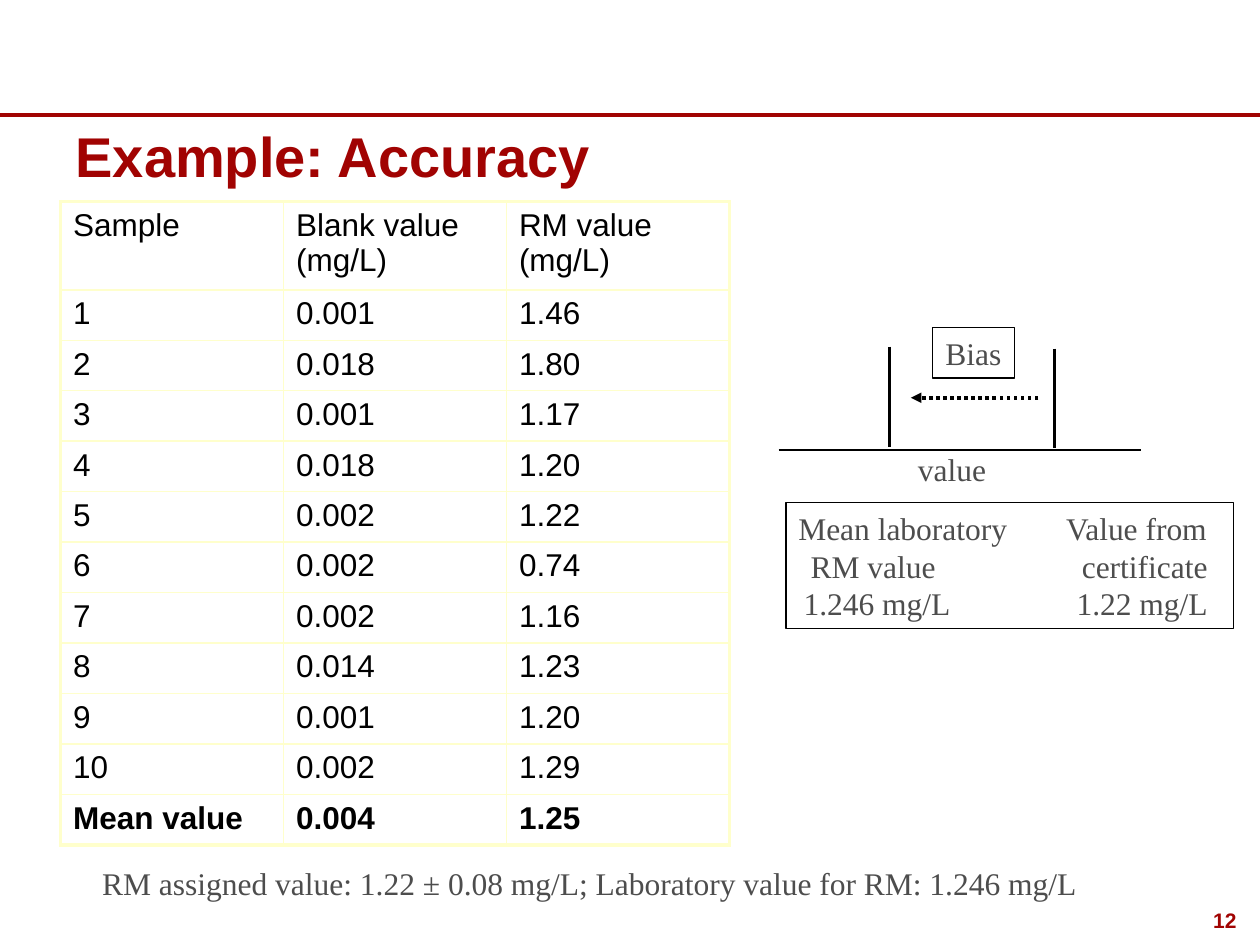
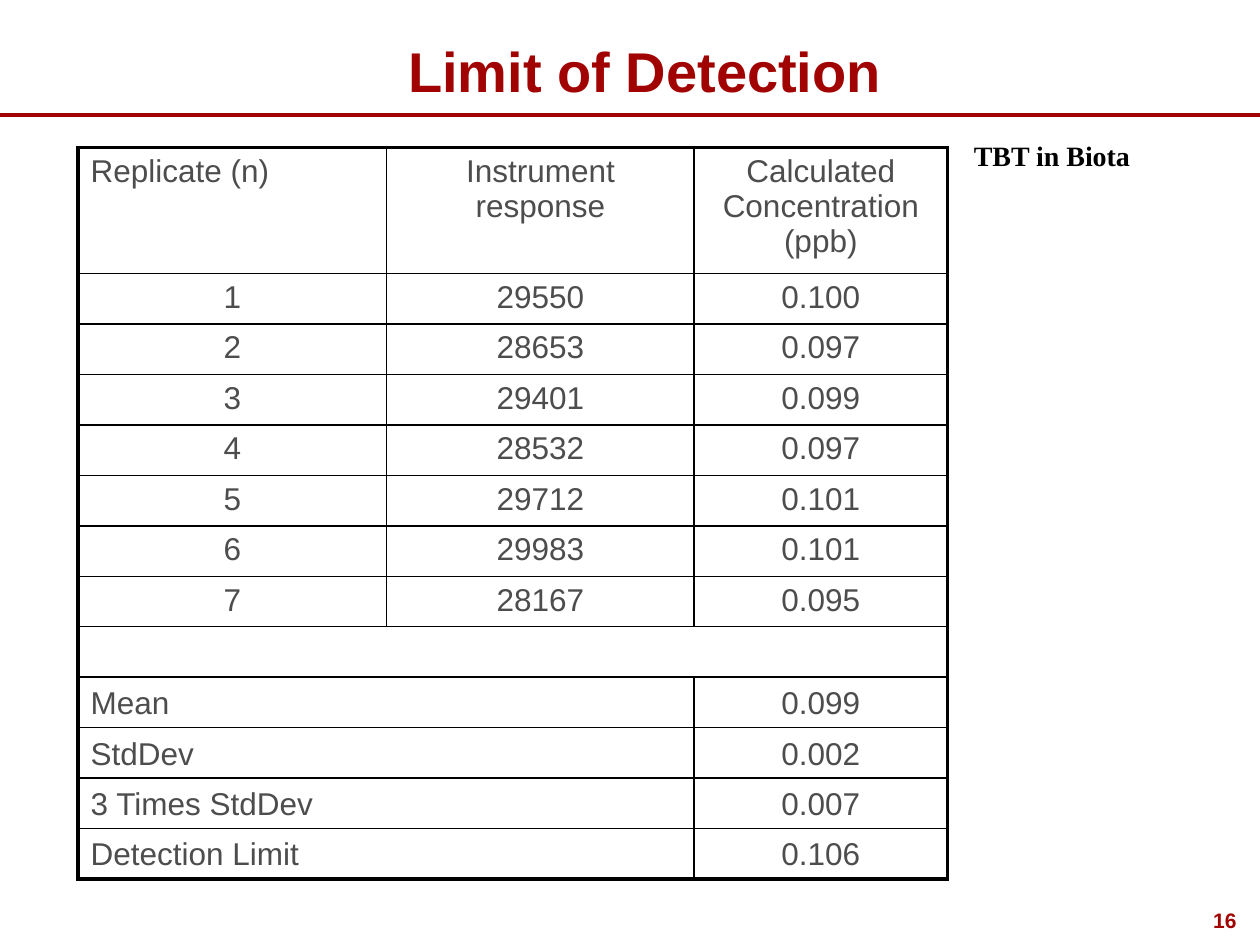
"""Build two slides on analytical quality: accuracy against a reference material and limit of detection."""
from lxml import etree
from pptx import Presentation
from pptx.dml.color import RGBColor
from pptx.enum import dml, shapes, text
from pptx.oxml.ns import qn
from pptx.util import Pt

COLORS = {"red": "A10302", "grey": "4D4D4D", "black": "000000", "cream": "FFFFCC"}
SANS, SERIF = "Arial", "Times New Roman"
LEFT, CENTER, RIGHT = text.PP_ALIGN.LEFT, text.PP_ALIGN.CENTER, text.PP_ALIGN.RIGHT
TOP, MIDDLE, BOTTOM = text.MSO_ANCHOR.TOP, text.MSO_ANCHOR.MIDDLE, text.MSO_ANCHOR.BOTTOM


def write(frame, words, font, size, color, bold=False, align=LEFT, anchor=TOP):
    frame.text = words
    frame.vertical_anchor = anchor
    for paragraph in frame.paragraphs:
        paragraph.alignment = align
        paragraph.font.size = Pt(size)
        for run in paragraph.runs:
            run.font.name, run.font.size, run.font.bold = font, Pt(size), bold
            run.font.color.rgb = RGBColor.from_string(COLORS[color])


def add_grid(slide, left, top, widths, heights, merges, color, outer):
    grid = slide.shapes.add_table(len(heights), len(widths), Pt(left), Pt(top),
                                  Pt(sum(widths)), Pt(sum(heights))).table
    grid.first_row = grid.horz_banding = False
    for column, width in zip(grid.columns, widths):
        column.width = Pt(width)
    for row, height in zip(grid.rows, heights):
        row.height = Pt(height)
    for r, last_c in merges:
        grid.cell(r, 0).merge(grid.cell(r, last_c))
    for r in range(len(heights)):
        for c in range(len(widths)):
            cell = grid.cell(r, c)
            end = c + (cell.span_width if cell.is_merge_origin else 1)
            on_edge = {"lnL": c == 0, "lnR": end == len(widths),
                       "lnT": r == 0, "lnB": r == len(heights) - 1}
            properties = cell._tc.get_or_add_tcPr()
            for side, is_outer in on_edge.items():
                border = etree.SubElement(properties, qn(f"a:{side}"),
                                          w=str(Pt(outer if is_outer else 1)))
                fill = etree.SubElement(border, qn("a:solidFill"))
                etree.SubElement(fill, qn("a:srgbClr"), val=COLORS[color])
            cell.fill.background()
    return grid


prs = Presentation()
prs.slide_width, prs.slide_height = Pt(720), Pt(540)
accuracy, detection = [prs.slides.add_slide(prs.slide_layouts[5]) for _ in range(2)]

for slide, heading, number, align, box in [
    (accuracy, "Example: Accuracy", "12", LEFT, (36, 21.6, 648, 90)),
    (detection, "Limit of Detection", "16", CENTER, (44.6, 16.6, 648, 46)),
]:
    title = slide.shapes.title
    title.left, title.top, title.width, title.height = map(Pt, box)
    write(title.text_frame, heading, SANS, 32, "red", True, align, BOTTOM)
    title.text_frame.auto_size = text.MSO_AUTO_SIZE.NONE
    page = slide.shapes.add_textbox(Pt(563.8), Pt(508.3), Pt(149.8), Pt(28))
    page.text_frame.word_wrap = True
    write(page.text_frame, number, SANS, 12, "red", True, RIGHT, BOTTOM)

blanks = ["0.001", "0.018", "0.001", "0.018", "0.002", "0.002", "0.002", "0.014", "0.001", "0.002"]
references = ["1.46", "1.80", "1.17", "1.20", "1.22", "0.74", "1.16", "1.23", "1.20", "1.29"]
samples = [("Sample", "Blank value (mg/L)", "RM value (mg/L)")]
samples += [(str(n), *pair) for n, pair in enumerate(zip(blanks, references), 1)]
samples.append(("Mean value", "0.004", "1.25"))
sample_grid = add_grid(accuracy, 34.6, 115.2, [127.4] * 3, [47.4] + [27.4] * 11, [], "cream", 2.25)
for r, sample in enumerate(samples):
    for c, value in enumerate(sample):
        write(sample_grid.cell(r, c).text_frame, value, SANS, 18, "black", r == len(samples) - 1)

responses = ["29550", "28653", "29401", "28532", "29712", "29983", "28167"]
concentrations = ["0.100", "0.097", "0.099", "0.097", "0.101", "0.101", "0.095"]
replicates = [("Replicate (n)", "Instrument response", "Calculated Concentration (ppb)")]
replicates += [(str(n), *pair) for n, pair in enumerate(zip(responses, concentrations), 1)]
replicates += [("", "", ""), ("Mean", "", "0.099"), ("StdDev", "", "0.002"),
               ("3 Times StdDev", "", "0.007"), ("Detection Limit", "", "0.106")]
gap_row = len(responses) + 1
merges = [(gap_row, 2)] + [(r, 1) for r in range(gap_row + 1, len(replicates))]
replicate_grid = add_grid(detection, 44.6, 84.3, [176.4, 175.7, 144.7],
                          [68.4] + [27.4] * 12, merges, "black", 2)
for r, replicate in enumerate(replicates):
    for c, value in enumerate(replicate):
        cell = replicate_grid.cell(r, c)
        if not cell.is_spanned:
            is_label = c == 0 and (r == 0 or r > gap_row)
            write(cell.text_frame, value, SANS, 18, "grey", align=LEFT if is_label else CENTER)
            cell.vertical_anchor = BOTTOM if r > gap_row else TOP

for slide, x1, y1, x2, y2, color, weight in [
    (accuracy, 0, 65.7, 720, 65.7, "red", 2.25),
    (detection, 0, 65.7, 720, 65.7, "red", 2.25),
    (accuracy, 508.3, 198, 508.3, 255.3, "black", 2),
    (accuracy, 602.5, 199.3, 602.5, 256.3, "black", 2),
    (accuracy, 444.9, 257.2, 652.3, 257.2, "black", 0.75),
    (accuracy, 593.3, 227.3, 520.5, 227.3, "black", 2),
]:
    rule = slide.shapes.add_connector(shapes.MSO_CONNECTOR.STRAIGHT, Pt(x1), Pt(y1), Pt(x2), Pt(y2))
    rule.line.color.rgb = RGBColor.from_string(COLORS[color])
    rule.line.width = Pt(weight)
    etree.SubElement(rule._element.spPr, qn("a:effectLst"))
bias_arrow = rule
bias_arrow.line.dash_style = dml.MSO_LINE.ROUND_DOT
etree.SubElement(bias_arrow.line._get_or_add_ln(), qn("a:tailEnd"), type="triangle")

for words, box in [
    ("Mean laboratory\tValue from\nRM value\tcertificate\n1.246 mg/L\t1.22 mg/L", (449.1, 287.2, 255.6, 72)),
    ("Bias", (532.8, 187.2, 46.8, 28.9)),
]:
    frame_box = accuracy.shapes.add_shape(shapes.MSO_SHAPE.RECTANGLE, *map(Pt, box))
    frame_box.shadow.inherit = False
    frame_box.fill.background()
    frame_box.line.color.rgb = RGBColor.from_string(COLORS["black"])
    frame_box.line.width = Pt(0.75)
    compared = "\t" in words
    frame_box.text_frame.word_wrap = compared
    write(frame_box.text_frame, words, SERIF, 18, "grey", align=LEFT if compared else CENTER, anchor=MIDDLE)
    if compared:
        for paragraph, indent, stop in zip(frame_box.text_frame.paragraphs, (0, 7, 3), (153, 155, 156)):
            properties = paragraph._p.get_or_add_pPr()
            properties.set("marL", str(Pt(indent)))
            tabs = etree.Element(qn("a:tabLst"))
            etree.SubElement(tabs, qn("a:tab"), pos=str(Pt(stop)), algn="l")
            properties.insert(0, tabs)

for slide, words, size, color, bold, wrap, box in [
    (accuracy, "RM assigned value: 1.22 ± 0.08 mg/L; Laboratory value for RM: 1.246 mg/L",
     18, "grey", False, True, (28.1, 490.3, 617.8, 28.9)),
    (accuracy, "value", 18, "grey", False, False, (517, 253.4, 54, 28.9)),
    (detection, "TBT in Biota", 16, "black", True, False, (548.6, 75.6, 105.1, 26.6)),
]:
    note = slide.shapes.add_textbox(*map(Pt, box))
    note.text_frame.word_wrap = wrap
    write(note.text_frame, words, SERIF, size, color, bold, CENTER)

prs.save("out.pptx")
